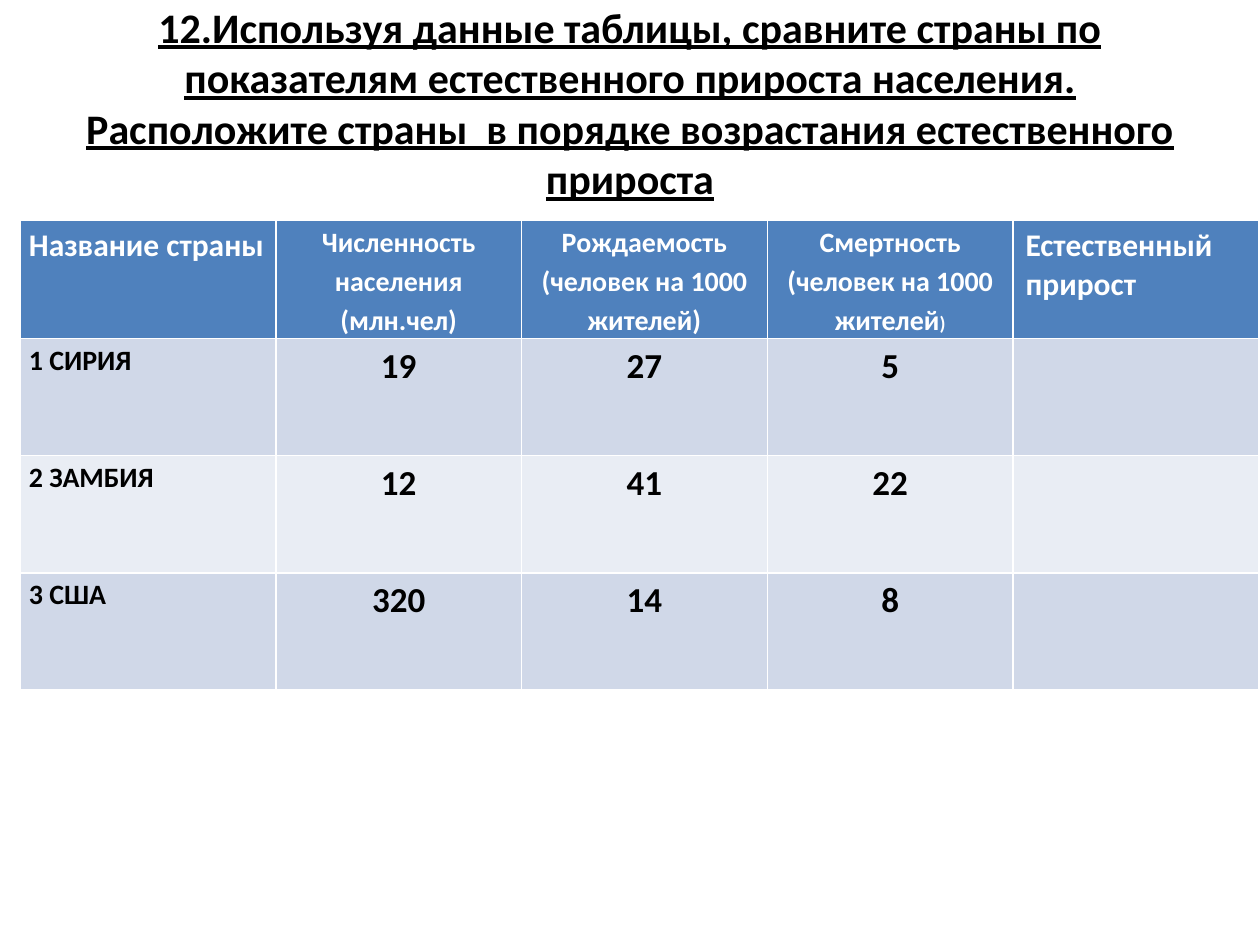
from pptx import Presentation
from pptx.dml.color import RGBColor
from pptx.enum.text import MSO_ANCHOR, MSO_AUTO_SIZE, PP_ALIGN
from pptx.util import Inches, Pt

BLACK = RGBColor(0x00, 0x00, 0x00)
WHITE = RGBColor(0xFF, 0xFF, 0xFF)
HEADER_BLUE = RGBColor(0x4F, 0x81, 0xBD)
BANDS = (RGBColor(0xD0, 0xD8, 0xE8), RGBColor(0xE9, 0xED, 0xF4))

TITLE = (
    "12.Используя данные таблицы, сравните страны по показателям "
    "естественного прироста населения. Расположите страны  в порядке "
    "возрастания естественного прироста"
)
# Each cell is a list of paragraphs, each paragraph a list of (text, size) runs.
HEADERS = [
    [[("Название страны", 18)]],
    [[("Численность населения (млн.чел)", 16)]],
    [[("Рождаемость", 16)], [("(человек на 1000 жителей)", 16)]],
    [[("Смертность", 16)], [("(человек на 1000 жителей", 16), (")", 11)]],
    [[("Естественный прирост", 18)]],
]
COUNTRIES = [
    ("1 СИРИЯ", "19", "27", "5"),
    ("2 ЗАМБИЯ", "12", "41", "22"),
    ("3 США", "320", "14", "8"),
]
COL_WIDTHS = [2.03] + [1.95] * 4
ROW_HEIGHT = 0.93
GROWTH_COL = 4


def format_font(font, size, color, **extra):
    values = {"name": "Calibri", "size": Pt(size), "bold": True, **extra}
    for name, value in values.items():
        setattr(font, name, value)
    font.color.rgb = color


def add_title(s):
    sp = s.shapes.title
    sp.left, sp.top = Inches(0.5), Inches(0.3)
    sp.width, sp.height = Inches(9), Inches(1.42)
    tf = sp.text_frame
    tf.word_wrap = True
    tf.auto_size = MSO_AUTO_SIZE.NONE
    tf.vertical_anchor = MSO_ANCHOR.MIDDLE
    tf.margin_bottom = Inches(0.45)
    p = tf.paragraphs[0]
    p.alignment = PP_ALIGN.CENTER
    r = p.add_run()
    r.text = TITLE
    format_font(r.font, 24, BLACK, underline=True)


def fill_cell(cell, paragraphs, color, col):
    """Write the runs; the growth column keeps default margins and spacing."""
    tf = cell.text_frame
    if col != GROWTH_COL:
        cell.margin_left = cell.margin_right = Inches(0.07)
        cell.margin_top = cell.margin_bottom = 0
    for i, runs in enumerate(paragraphs):
        p = tf.add_paragraph() if i else tf.paragraphs[0]
        if col != GROWTH_COL:
            p.line_spacing = 1.15
            p.alignment = PP_ALIGN.CENTER if col else PP_ALIGN.LEFT
        for text, size in runs:
            r = p.add_run()
            r.text = text
            format_font(r.font, size, color)


def add_country_table(s):
    rows = [HEADERS]
    for name, *numbers in COUNTRIES:
        rows.append([[[(name, 16)]]] + [[[(n, 20)]] for n in numbers] + [[]])
    table = s.shapes.add_table(
        len(rows), len(COL_WIDTHS), Inches(0.16), Inches(1.75),
        Inches(sum(COL_WIDTHS)), Inches(ROW_HEIGHT * len(rows)),
    ).table
    for column, width in zip(table.columns, COL_WIDTHS):
        column.width = Inches(width)
    for i, row in enumerate(rows):
        table.rows[i].height = Inches(ROW_HEIGHT)
        for col, paragraphs in enumerate(row):
            cell = table.cell(i, col)
            cell.fill.solid()
            cell.fill.fore_color.rgb = BANDS[(i - 1) % 2] if i else HEADER_BLUE
            fill_cell(cell, paragraphs, BLACK if i else WHITE, col)


def main():
    prs = Presentation()
    prs.slide_width, prs.slide_height = Inches(10), Inches(7.5)
    s = prs.slides.add_slide(prs.slide_layouts[5])
    add_title(s)
    add_country_table(s)
    prs.save("out.pptx")


if __name__ == "__main__":
    main()
